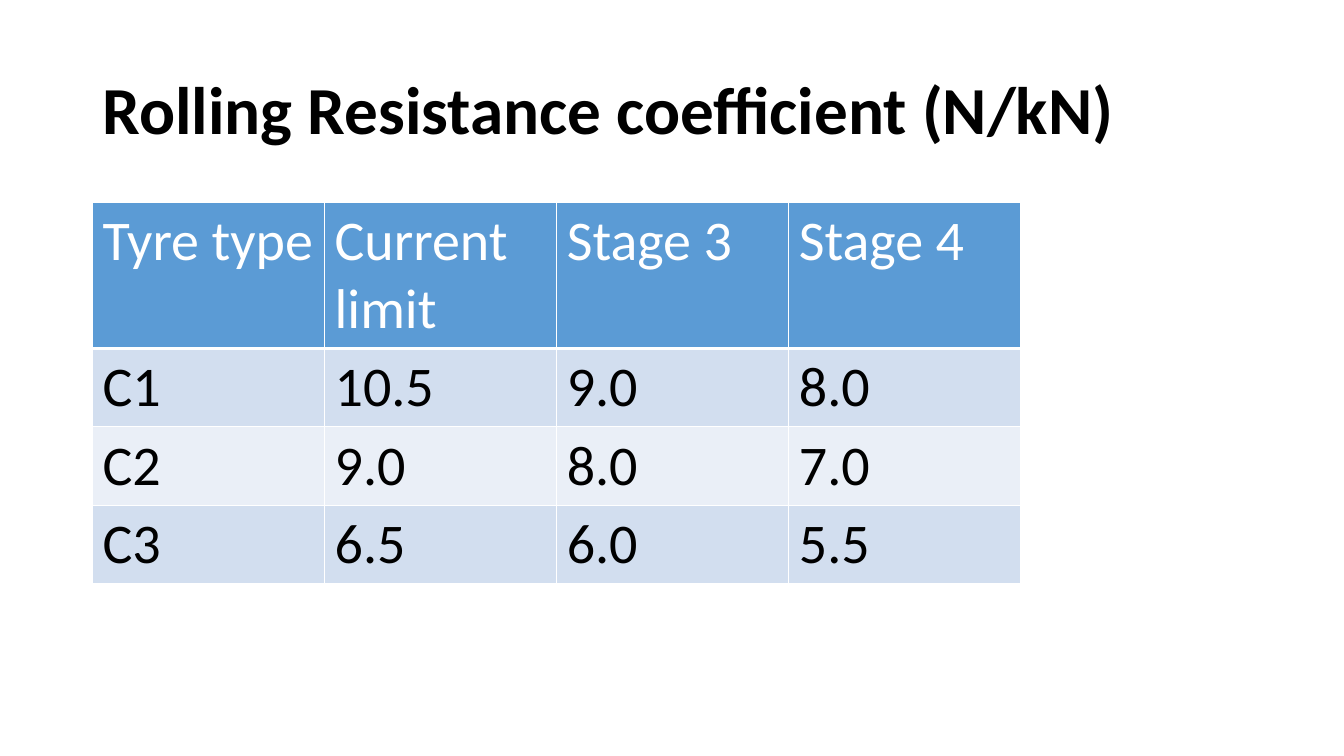
from pptx import Presentation
from pptx.dml.color import RGBColor
from pptx.enum.text import MSO_ANCHOR, PP_ALIGN
from pptx.oxml import parse_xml
from pptx.oxml.ns import nsdecls
from pptx.util import Cm, Pt

BLACK = RGBColor(0x00, 0x00, 0x00)
WHITE = RGBColor(0xFF, 0xFF, 0xFF)
BLUE = RGBColor(0x5B, 0x9B, 0xD5)
BAND = RGBColor(0xD2, 0xDE, 0xEF)
PALE = RGBColor(0xEA, 0xEF, 0xF7)

HEAD = {"name": "Calibri", "size": Pt(48), "bold": True}
CELL = {"name": "Calibri", "size": Pt(40), "bold": False}

ROWS = [
    ["Tyre type", "Current limit", "Stage 3", "Stage 4"],
    ["C1", "10.5", "9.0", "8.0"],
    ["C2", "9.0", "8.0", "7.0"],
    ["C3", "6.5", "6.0", "5.5"],
]


def style(font, form, color):
    for key, value in form.items():
        setattr(font, key, value)
    font.color.rgb = color


def border(cell, side, width):
    cell._tc.get_or_add_tcPr().append(parse_xml(
        f'<a:{side} {nsdecls("a")} w="{Pt(width)}"><a:solidFill>'
        f'<a:srgbClr val="{WHITE}"/></a:solidFill></a:{side}>'))


# Slide
deck = Presentation()
deck.slide_width, deck.slide_height = Cm(33.87), Cm(19.05)
slide = deck.slides.add_slide(deck.slide_layouts[5])

# Title
title = slide.shapes.title
title.left, title.top = Cm(2.33), Cm(1.01)
title.width, title.height = Cm(29.21), Cm(3.68)
title.text_frame.vertical_anchor = MSO_ANCHOR.MIDDLE
para = title.text_frame.paragraphs[0]
para.text = "Rolling Resistance coefficient (N/kN)"
para.alignment = PP_ALIGN.LEFT
para.line_spacing = 0.9
style(para.runs[0].font, HEAD, BLACK)

# Table: rows grow to fit their text
frame = slide.shapes.add_table(
    len(ROWS), len(ROWS[0]), Cm(2.33), Cm(5.09), Cm(23.4), Cm(4.12))
frame.height = Cm(9.47)
table = frame.table

for r, row in enumerate(ROWS):
    fill = BLUE if r == 0 else BAND if r % 2 else PALE
    ink = WHITE if r == 0 else BLACK
    for c, text in enumerate(row):
        cell = table.cell(r, c)
        cell.text = text
        style(cell.text_frame.paragraphs[0].runs[0].font, CELL, ink)
        # Thicker rule below the header; borders precede the fill
        for side in ("lnL", "lnR", "lnT", "lnB"):
            thick = (r, side) in ((0, "lnB"), (1, "lnT"))
            border(cell, side, 3 if thick else 1)
        cell.fill.solid()
        cell.fill.fore_color.rgb = fill

deck.save("out.pptx")
